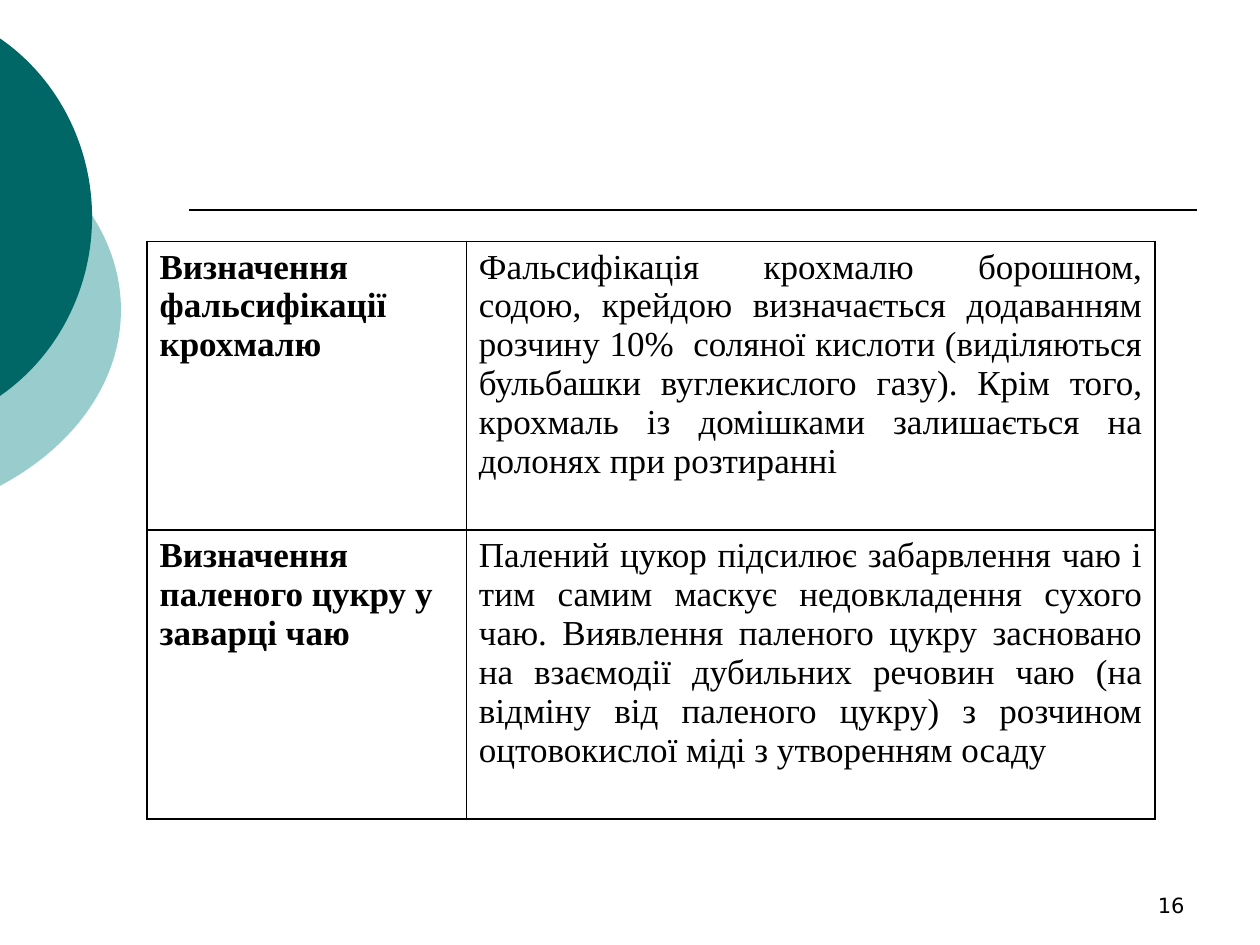
from lxml.etree import SubElement
from pptx import Presentation
from pptx.dml.color import RGBColor
from pptx.enum.shapes import MSO_CONNECTOR
from pptx.enum.text import MSO_ANCHOR, PP_ALIGN
from pptx.oxml import parse_xml
from pptx.oxml.ns import nsdecls, qn
from pptx.util import Pt


def color(value):
    return RGBColor.from_string(value)


class SlideBuilder:
    ink = "000000"
    body_font = "Times New Roman"
    number_font = "DejaVu Sans"
    line_width = 1

    def __init__(self, slide):
        self.slide = slide

    def add_run(self, paragraph, text, font, size, bold=False):
        run = paragraph.add_run()
        run.text = text
        run.font.name = font
        run.font.size = Pt(size)
        run.font.bold = bold
        run.font.color.rgb = color(self.ink)

    def add_edge_arc(self, left, top, width, height, upper_half, fill):
        right, bottom = left + width, top + height
        corners = [(right, top), (right, bottom), (left, bottom)]
        builder = self.slide.shapes.build_freeform(Pt(left), Pt(top))
        builder.add_line_segments([(Pt(x), Pt(y)) for x, y in corners], close=True)
        shape = builder.convert_to_shape()
        shape.shadow.inherit = False
        shape.fill.solid()
        shape.fill.fore_color.rgb = color(fill)
        shape.line.fill.background()

        middle = upper_half[-1][1]
        lower_half = [(x, 2 * middle - y) for x, y in reversed(upper_half[:-1])]
        outline = upper_half + lower_half
        path = shape._element.spPr.find(".//" + qn("a:path"))
        for segment in list(path):
            path.remove(segment)
        for name, points in (("moveTo", outline[:1]), ("cubicBezTo", outline[1:4]),
                             ("cubicBezTo", outline[4:])):
            segment = SubElement(path, qn(f"a:{name}"))
            for x, y in points:
                SubElement(segment, qn("a:pt"), x=str(Pt(x - left)), y=str(Pt(y - top)))
        SubElement(path, qn("a:close"))

    def add_rule(self, left, right, top):
        connector = self.slide.shapes.add_connector(
            MSO_CONNECTOR.STRAIGHT, Pt(left), Pt(top), Pt(right), Pt(top))
        connector.line.color.rgb = color(self.ink)
        connector.line.width = Pt(self.line_width)
        SubElement(connector._element.spPr, qn("a:effectLst"))

    def add_slide_number(self, text, left, top, width, height):
        shape = self.slide.shapes.add_textbox(Pt(left), Pt(top), Pt(width), Pt(height))
        frame = shape.text_frame
        frame.word_wrap = True
        frame.vertical_anchor = MSO_ANCHOR.BOTTOM
        paragraph = frame.paragraphs[0]
        paragraph.alignment = PP_ALIGN.RIGHT
        self.add_run(paragraph, text, self.number_font, 12)

    def add_borders(self, cell):
        properties = cell._tc.get_or_add_tcPr()
        for index, side in enumerate(("lnL", "lnR", "lnT", "lnB")):
            properties.insert(index, parse_xml(
                f'<a:{side} {nsdecls("a")} w="{Pt(self.line_width)}"><a:solidFill>'
                f'<a:srgbClr val="{self.ink}"/></a:solidFill></a:{side}>'))

    def add_table(self, rows, left, top, column_widths, row_height):
        table = self.slide.shapes.add_table(
            len(rows), len(column_widths), Pt(left), Pt(top),
            Pt(sum(column_widths)), Pt(row_height * len(rows))).table
        table.first_row = False
        table.horz_banding = False
        for column, width in zip(table.columns, column_widths):
            column.width = Pt(width)
        for row, texts in zip(table.rows, rows):
            row.height = Pt(row_height)
            for index, (cell, text) in enumerate(zip(row.cells, texts)):
                is_heading = index == 0
                cell.fill.background()
                self.add_borders(cell)
                paragraph = cell.text_frame.paragraphs[0]
                paragraph.alignment = PP_ALIGN.LEFT if is_heading else PP_ALIGN.JUSTIFY
                self.add_run(paragraph, text, self.body_font, 20, is_heading)


def main():
    presentation = Presentation()
    presentation.slide_width = Pt(720)
    presentation.slide_height = Pt(540)
    slide = presentation.slides.add_slide(presentation.slide_layouts[6])
    builder = SlideBuilder(slide)

    light_arc = [(-0.5, 76.3), (43.2, 99.4), (69.1, 136.8), (69.1, 177.1)]
    dark_arc = [(-0.5, 21.6), (33.1, 44.6), (52.6, 83.5), (52.6, 124.1)]
    builder.add_edge_arc(-254.9, 54, 324, 246.2, light_arc, "99CCCC")
    builder.add_edge_arc(-190.8, 0, 243.4, 248.4, dark_arc, "006666")
    builder.add_rule(108, 684, 120)
    builder.add_slide_number("16", 516, 492, 168, 36)

    findings = [
        ("Визначення фальсифікації крохмалю",
         "Фальсифікація крохмалю борошном, содою, крейдою визначається додаванням "
         "розчину 10%  соляної кислоти (виділяються бульбашки вуглекислого газу). "
         "Крім того, крохмаль із домішками залишається на долонях при розтиранні"),
        ("Визначення паленого цукру у заварці чаю",
         "Палений цукор підсилює забарвлення чаю і тим самим маскує недовкладення "
         "сухого чаю. Виявлення паленого цукру засновано на взаємодії дубильних "
         "речовин чаю (на відміну від паленого цукру) з розчином оцтовокислої міді "
         "з утворенням осаду"),
    ]
    builder.add_table(findings, 84, 138, (182.5, 393.5), 165)
    presentation.save("out.pptx")


if __name__ == "__main__":
    main()
